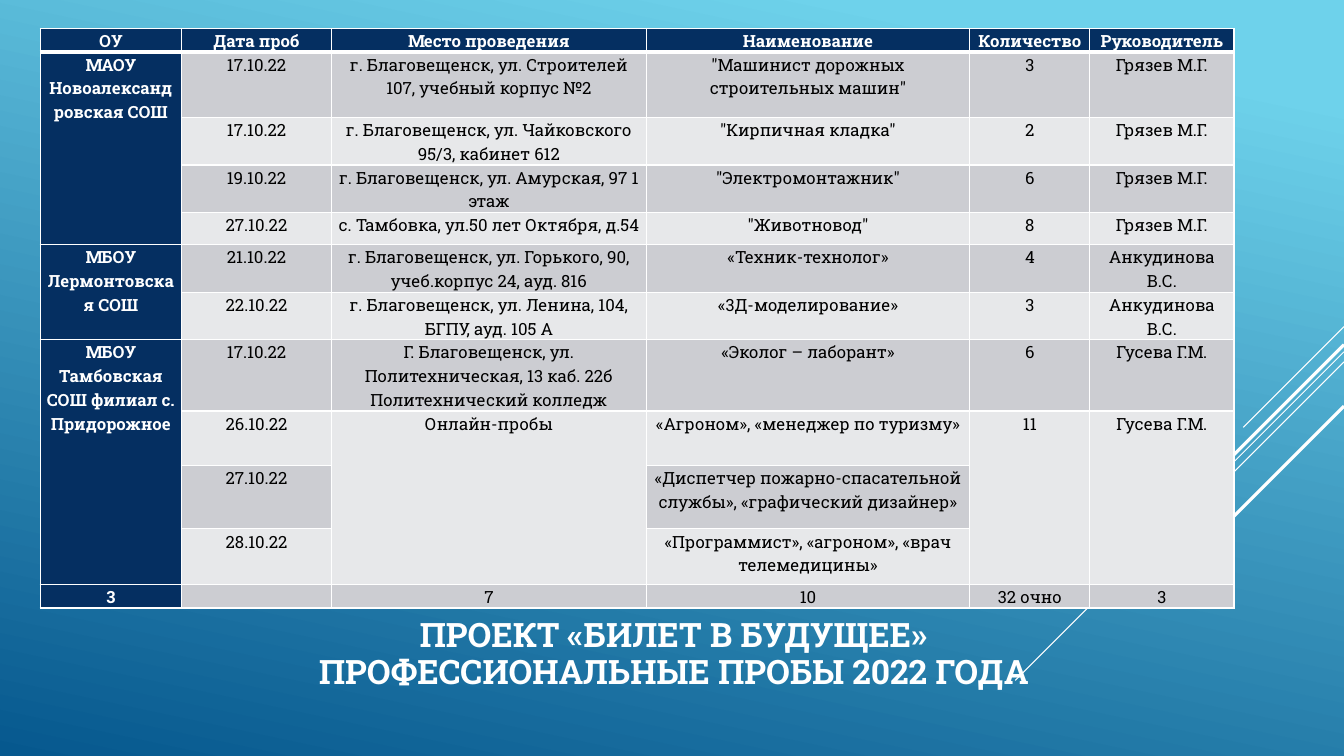
from itertools import takewhile
from typing import NamedTuple

from pptx import Presentation
from pptx.dml.color import RGBColor
from pptx.enum.shapes import MSO_CONNECTOR as Connector
from pptx.enum.text import MSO_ANCHOR as Anchor, MSO_AUTO_SIZE as AutoSize, PP_ALIGN as Align
from pptx.oxml.xmlchemy import OxmlElement as Element
from pptx.util import Inches, Pt

FONT = "Roboto Slab"
COLORS = {
    "white": "FFFFFF",
    "black": "000000",
    "navy": "052F61",
    "band_dark": "CCCDD2",
    "band_light": "E7E8EA",
    "sky": "6ED2EB",
    "deep": "06588E",
}


class Ray(NamedTuple):
    top: float
    length: float
    weight: float


RAYS = [
    Ray(3.24, 1, 0.75),
    Ray(3.49, 3.26, 0.75),
    Ray(3.59, 2.07, 0.75),
    Ray(3.42, 1.91, 2.25),
    Ray(4.03, 1.39, 2.25),
]

COL_WIDTHS = [1.4, 1.49, 3.12, 3.21, 1.19, 1.43]
ROW_HEIGHTS = [0.23, 0.65, 0.43, 0.34, 0.32, 0.46, 0.34, 0.68, 0.54, 0.63, 0.55, 0.15]
ROWS = [
    ["ОУ", "Дата проб", "Место проведения", "Наименование", "Количество", "Руководитель"],
    ["МАОУ Новоалександровская СОШ", "17.10.22",
     "г. Благовещенск, ул. Строителей 107, учебный корпус №2",
     '"Машинист дорожных строительных машин"', "3", "Грязев М.Г."],
    [None, "17.10.22", "г. Благовещенск, ул. Чайковского 95/3, кабинет 612",
     '"Кирпичная кладка"', "2", "Грязев М.Г."],
    [None, "19.10.22", "г. Благовещенск, ул. Амурская, 97 1 этаж",
     '"Электромонтажник"', "6", "Грязев М.Г."],
    [None, "27.10.22", "с. Тамбовка, ул.50 лет Октября, д.54",
     '"Животновод"', "8", "Грязев М.Г."],
    ["МБОУ Лермонтовская СОШ", "21.10.22",
     "г. Благовещенск, ул. Горького, 90, учеб.корпус 24, ауд. 816",
     "«Техник-технолог»", "4", "Анкудинова В.С."],
    [None, "22.10.22", "г. Благовещенск, ул. Ленина, 104, БГПУ, ауд. 105 А",
     "«3Д-моделирование»", "3", "Анкудинова В.С."],
    ["МБОУ Тамбовская СОШ филиал с. Придорожное", "17.10.22",
     "Г. Благовещенск, ул. Политехническая, 13 каб. 22б Политехнический колледж",
     "«Эколог – лаборант»", "6", "Гусева Г.М."],
    [None, "26.10.22", "Онлайн-пробы", "«Агроном», «менеджер по туризму»", "11", "Гусева Г.М."],
    [None, "27.10.22", None,
     "«Диспетчер пожарно-спасательной службы», «графический дизайнер»", None, None],
    [None, "28.10.22", None, "«Программист», «агроном», «врач телемедицины»", None, None],
    ["3", "", "7", "10", "32 очно", "3"],
]


def rgb(name: str) -> RGBColor:
    return RGBColor.from_string(COLORS[name])


def style_paragraph(p, size: float, color: str, bold: bool, spacing: float) -> None:
    p.alignment = Align.CENTER
    p.line_spacing = spacing
    for r in p.runs:
        r.font.name = FONT
        r.font.size = Pt(size)
        r.font.bold = bold
        r.font.color.rgb = rgb(color)


def paint_background(s) -> None:
    fill = s.background.fill
    fill.gradient()
    fill.gradient_angle = 258
    for stop, name, position in zip(fill.gradient_stops, ("sky", "deep"), (0.1, 1)):
        stop.color.rgb = rgb(name)
        stop.position = position


def draw_ray(s, ray: Ray) -> None:
    right = 13.33
    line = s.shapes.add_connector(
        Connector.STRAIGHT, Inches(right), Inches(ray.top),
        Inches(right - ray.length), Inches(ray.top + ray.length))
    line.line.color.rgb = rgb("white")
    line.line.width = Pt(ray.weight)
    line._element.spPr.append(Element("a:effectLst"))


def set_border(cell, index: int, side: str, weight: float) -> None:
    ln = Element(f"a:ln{side}")
    ln.set("w", str(Pt(weight)))
    fill = Element("a:solidFill")
    color = Element("a:srgbClr")
    color.set("val", COLORS["white"])
    fill.append(color)
    ln.append(fill)
    cell._tc.get_or_add_tcPr().insert(index, ln)


def format_cell(cell, text: str, row: int, col: int) -> None:
    heading = row == 0 or col == 0
    band = "band_dark" if row % 2 else "band_light"
    cell.margin_left = cell.margin_right = Inches(0.04)
    cell.margin_top = cell.margin_bottom = 0
    cell.fill.solid()
    cell.fill.fore_color.rgb = rgb("navy" if heading else band)
    for index, side in enumerate("LRTB"):
        thick = (row, side) in ((0, "B"), (1, "T"))
        set_border(cell, index, side, 3 if thick else 1)
    cell.text_frame.text = text
    p = cell.text_frame.paragraphs[0]
    style_paragraph(p, 12, "white" if heading else "black", heading, 1.07)
    if not text:
        end = Element("a:endParaRPr")
        end.set("sz", "1200")
        p._p.append(end)


def draw_table(s) -> None:
    table = s.shapes.add_table(
        len(ROWS), len(COL_WIDTHS), Inches(0.4), Inches(0.28),
        Inches(sum(COL_WIDTHS)), Inches(sum(ROW_HEIGHTS))).table
    for column, width in zip(table.columns, COL_WIDTHS):
        column.width = Inches(width)
    for row, height in zip(table.rows, ROW_HEIGHTS):
        row.height = Inches(height)
    for i, values in enumerate(ROWS):
        for j, text in enumerate(values):
            format_cell(table.cell(i, j), text or "", i, j)
            below = [later[j] for later in ROWS[i + 1:]]
            span = len(list(takewhile(lambda value: value is None, below)))
            if text is not None and span:
                table.cell(i, j).merge(table.cell(i + span, j))


def write_title(s) -> None:
    title = s.shapes.title
    title.left, title.top = Inches(0.75), Inches(6.1)
    title.width, title.height = Inches(11.86), Inches(1.2)
    tf = title.text_frame
    tf.text = "ПРОЕКТ «БИЛЕТ В БУДУЩЕЕ»\vПРОФЕССИОНАЛЬНЫЕ ПРОБЫ 2022 ГОДА"
    tf.word_wrap = True
    tf.auto_size = AutoSize.NONE
    tf.vertical_anchor = Anchor.MIDDLE
    tf.margin_bottom = Inches(0.45)
    style_paragraph(tf.paragraphs[0], 24, "white", True, 0.9)


def main() -> None:
    prs = Presentation()
    prs.slide_width, prs.slide_height = Inches(13.33), Inches(7.5)
    s = prs.slides.add_slide(prs.slide_layouts[5])
    paint_background(s)
    for ray in RAYS:
        draw_ray(s, ray)
    write_title(s)
    draw_table(s)
    prs.save("out.pptx")


if __name__ == "__main__":
    main()
